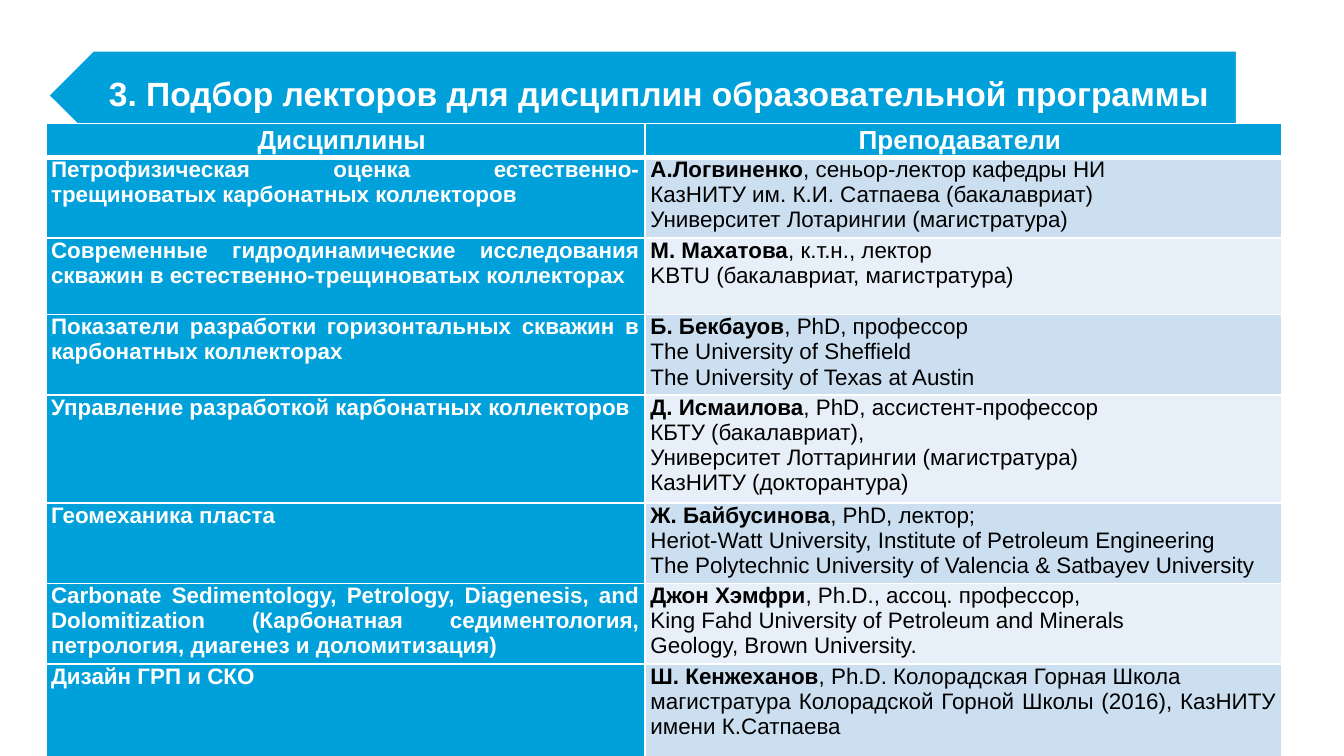
from dataclasses import dataclass

from lxml.etree import SubElement
from pptx import Presentation
from pptx.dml.color import RGBColor
from pptx.enum.shapes import MSO_SHAPE as Preset
from pptx.enum.text import MSO_ANCHOR as Anchor, PP_ALIGN as Align
from pptx.oxml.ns import qn
from pptx.util import Inches, Pt

FONT = "Arial"
BLUE, WHITE, BLACK = "00A0DB", "FFFFFF", "000000"
BANDS = ("CCDFF1", "E7F0F8")
COLUMN_WIDTHS = (4.46, 4.74)
HEADER_HEIGHT = 0.1  # grows to fit its text
HEADINGS = ("Дисциплины ", "Преподаватели ")


@dataclass
class Course:
    discipline: str
    lecturer: str
    position: str
    schools: tuple[str, ...]
    height: float = 0.57
    alignment: Align = Align.JUSTIFY


COURSES = (
    Course("Петрофизическая оценка естественно-трещиноватых карбонатных коллекторов",
           "А.Логвиненко", ", сеньор-лектор кафедры НИ",
           ("КазНИТУ им. К.И. Сатпаева (бакалавриат)",
            "Университет Лотарингии (магистратура)")),
    Course("Современные гидродинамические исследования скважин в "
           "естественно-трещиноватых коллекторах",
           "М. Махатова", ", к.т.н., лектор",
           ("KBTU (бакалавриат, магистратура)",), alignment=Align.LEFT),
    Course("Показатели разработки горизонтальных скважин в карбонатных коллекторах",
           "Б. Бекбауов", ", PhD, профессор",
           ("The University of Sheffield ", "The University of Texas at Austin ")),
    Course("Управление разработкой карбонатных коллекторов",
           "Д. Исмаилова", ", PhD, ассистент-профессор",
           ("КБТУ (бакалавриат),", "Университет Лоттарингии (магистратура)",
            "КазНИТУ (докторантура)"), 0.77),
    Course("Геомеханика пласта",
           "Ж. Байбусинова", ", PhD, лектор; ",
           ("Heriot-Watt University, Institute of Petroleum Engineering",
            "The Polytechnic University of Valencia & Satbayev University ")),
    Course("Carbonate Sedimentology, Petrology, Diagenesis, and Dolomitization "
           "(Карбонатная седиментология, петрология, диагенез и доломитизация)",
           "Джон Хэмфри", ", Ph.D., ассоц. профессор, ",
           ("King Fahd University of Petroleum and Minerals",
            "Geology, Brown University. ")),
    Course("Дизайн ГРП и СКО",
           "Ш. Кенжеханов", ", Ph.D. Колорадская Горная Школа",
           ("магистратура Колорадской Горной Школы (2016), "
            "КазНИТУ имени К.Сатпаева  ",), 0.85),
)


def paint(color_format, color: str) -> None:
    color_format.rgb = RGBColor.from_string(color)


def fill_solid(fill, color: str) -> None:
    fill.solid()
    paint(fill.fore_color, color)


def add_span(para, text: str, size: float, color: str, bold: bool) -> None:
    span = para.add_run()
    span.text = text
    span.font.name, span.font.size, span.font.bold = FONT, Pt(size), bold
    paint(span.font.color, color)


def style_cell(cell, color: str, bottom: float = 1) -> None:
    """Set margins, white borders and fill."""
    cell.margin_left = cell.margin_right = Inches(0.04)
    cell.margin_top = cell.margin_bottom = 0
    properties = cell._tc.get_or_add_tcPr()
    for side, width in (("L", 1), ("R", 1), ("T", 1), ("B", bottom)):
        border = SubElement(properties, qn(f"a:ln{side}"), w=str(Pt(width)))
        solid = SubElement(border, qn("a:solidFill"))
        SubElement(solid, qn("a:srgbClr"), val=WHITE)
    fill_solid(cell.fill, color)


def write_heading(cell, text: str) -> None:
    style_cell(cell, BLUE, bottom=3)
    para = cell.text_frame.paragraphs[0]
    para.alignment = Align.CENTER
    para.line_spacing = 1.07
    para.space_after = Pt(8)
    add_span(para, text, 14, WHITE, True)


def write_discipline(cell, course: Course) -> None:
    style_cell(cell, BLUE)
    para = cell.text_frame.paragraphs[0]
    para.alignment = Align.JUSTIFY
    add_span(para, course.discipline, 12, WHITE, True)


def write_lecturer(cell, course: Course, color: str) -> None:
    style_cell(cell, color)
    frame = cell.text_frame
    first = frame.paragraphs[0]
    add_span(first, course.lecturer, 12, BLACK, True)
    add_span(first, course.position, 12, BLACK, False)
    for school in course.schools:
        add_span(frame.add_paragraph(), school, 12, BLACK, False)
    for para in frame.paragraphs:
        para.alignment = course.alignment


def add_title(page, text: str) -> None:
    banner = page.shapes.add_shape(
        Preset.PENTAGON, Inches(0.35), Inches(0.37), Inches(8.86), Inches(0.68))
    banner.rotation = 180
    banner.shadow.inherit = False
    fill_solid(banner.fill, BLUE)
    paint(banner.line.color, WHITE)
    banner.line.width = Pt(2)

    box = page.shapes.add_textbox(
        Inches(0.59), Inches(0.37), Inches(8.73), Inches(0.88))
    frame = box.text_frame
    frame.word_wrap = True
    frame.vertical_anchor = Anchor.MIDDLE
    frame.margin_left, frame.margin_right = Inches(0.22), Inches(0.12)
    frame.margin_top, frame.margin_bottom = Inches(0.07), Inches(0.3)
    add_span(frame.paragraphs[0], text, 18, WHITE, True)


def add_courses(page) -> None:
    heights = [HEADER_HEIGHT] + [course.height for course in COURSES]
    table = page.shapes.add_table(
        len(heights), len(COLUMN_WIDTHS), Inches(0.34), Inches(0.92),
        Inches(sum(COLUMN_WIDTHS)), Inches(sum(heights))).table
    table.horz_banding = False
    for column, width in zip(table.columns, COLUMN_WIDTHS):
        column.width = Inches(width)
    for row, height in zip(table.rows, heights):
        row.height = Inches(height)
    for index, heading in enumerate(HEADINGS):
        write_heading(table.cell(0, index), heading)
    for index, course in enumerate(COURSES):
        write_discipline(table.cell(index + 1, 0), course)
        write_lecturer(table.cell(index + 1, 1), course, BANDS[index % 2])


def main() -> None:
    deck = Presentation()
    deck.slide_width = Inches(10)
    deck.slide_height = deck.slide_width * 9 // 16
    page = deck.slides.add_slide(deck.slide_layouts[6])
    # Title banner
    add_title(page, "3. Подбор лекторов для дисциплин образовательной программы")
    # Disciplines and their lecturers
    add_courses(page)
    deck.save("out.pptx")


if __name__ == "__main__":
    main()
